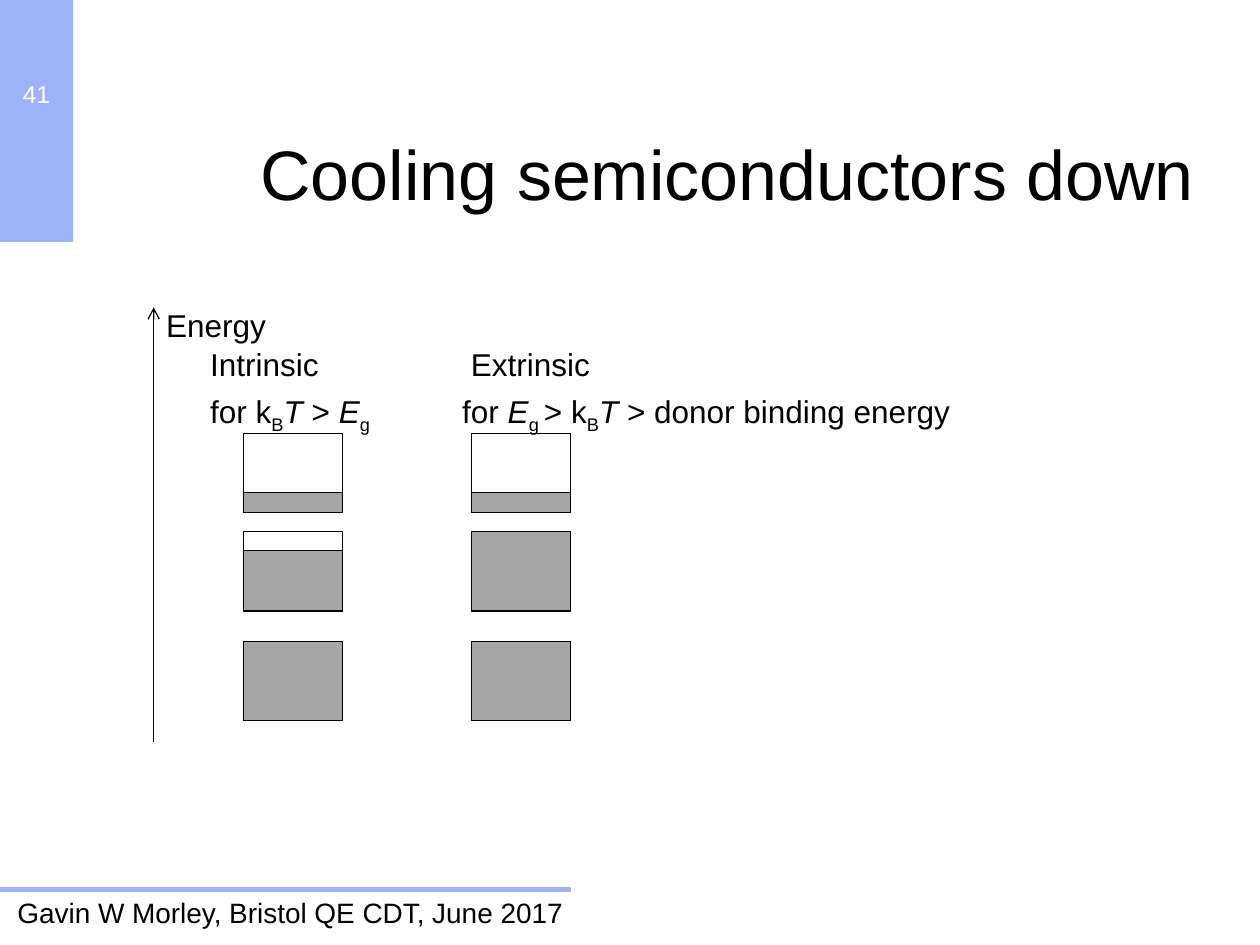
from lxml import etree
from pptx import Presentation
from pptx.dml.color import RGBColor
from pptx.enum import shapes, text
from pptx.oxml import ns
from pptx.util import Inches, Pt

BLUE = RGBColor(0x9D, 0xB2, 0xF8)
GREY = RGBColor(0xA6, 0xA6, 0xA6)
BLACK = RGBColor(0, 0, 0)
WHITE = RGBColor(255, 255, 255)
FONT = "Arial"

# Runs are (words, style): "" plain, "i" italic, "sub" subscript
TITLE = [[("Cooling semiconductors down", "")]]
FOOTER = [[("Gavin W Morley, Bristol QE CDT, June 2017", "")]]
NUMBER = [[("41", "")]]
AXIS = [[("Energy", "")]]
LABELS = [
    [("Intrinsic \t\t Extrinsic", "")],
    [("for k", ""), ("B", "sub"), ("T", "i"), (" > ", ""), ("E", "i"), ("g", "sub"),
     ("\tfor ", ""), ("E", "i"), ("g ", "sub"), ("> k", ""), ("B", "sub"), ("T", "i"),
     (" > donor binding energy\t", "")],
]
LABEL_TABS = range(1, 7)

# Bands are (top, height, fill), from back to front
BAND_W = 0.79
EMPTY = (3.44, 0.63, None)
CARRIERS = (3.91, 0.16, GREY)
CORE = (5.09, 0.63, GREY)
BANDS = {
    1.93: [(4.37, 0.48, GREY), EMPTY, CORE, (4.22, 0.63, None), CARRIERS],  # intrinsic
    3.74: [EMPTY, CORE, CARRIERS, (4.22, 0.63, GREY)],  # extrinsic
}


def add_box(slide, x, y, w, h, fill, edge=None):
    box = slide.shapes.add_shape(
        shapes.MSO_SHAPE.RECTANGLE, Inches(x), Inches(y), Inches(w), Inches(h))
    box.shadow.inherit = False
    if fill is None:
        box.fill.background()
    else:
        box.fill.solid()
        box.fill.fore_color.rgb = fill
    if edge is None:
        box.line.fill.background()
    else:
        box.line.color.rgb = edge
        box.line.width = Pt(0.75)


def set_tabs(para, stops):
    tabs = etree.SubElement(para._p.get_or_add_pPr(), ns.qn("a:tabLst"))
    for stop in stops:
        etree.SubElement(tabs, ns.qn("a:tab"), pos=str(Inches(stop)), algn="l")


def add_text(slide, x, y, w, h, paras, size, color=BLACK, align=None,
             before=0, pitch=None, wrap=True, tabs=()):
    frame = slide.shapes.add_textbox(
        Inches(x), Inches(y), Inches(w), Inches(h)).text_frame
    frame.word_wrap = wrap
    frame.vertical_anchor = text.MSO_ANCHOR.TOP
    for n, runs in enumerate(paras):
        para = frame.add_paragraph() if n else frame.paragraphs[0]
        para.alignment = align
        para.space_before = Pt(before)
        if pitch:
            para.line_spacing = Pt(pitch)
        if tabs:
            set_tabs(para, tabs)
        for words, style in runs:
            run = para.add_run()
            run.text = words
            run.font.name = FONT
            run.font.size = Pt(size)
            run.font.color.rgb = color
            if style == "i":
                run.font.italic = True
            elif style == "sub":
                run.font._element.set("baseline", "-25000")


def add_line(slide, x1, y1, x2, y2, color, width, arrow=False):
    line = slide.shapes.add_connector(
        shapes.MSO_CONNECTOR.STRAIGHT, Inches(x1), Inches(y1), Inches(x2), Inches(y2))
    line.line.color.rgb = color
    line.line.width = Pt(width)
    if arrow:
        etree.SubElement(line.line._get_or_add_ln(), ns.qn("a:tailEnd"), type="arrow")
    etree.SubElement(line._element.spPr, ns.qn("a:effectLst"))


def main():
    deck = Presentation()
    deck.slide_width, deck.slide_height = Inches(10), Inches(7.5)
    slide = deck.slides.add_slide(deck.slide_layouts[6])

    add_box(slide, 0, 0, 0.58, 1.92, BLUE)
    add_text(slide, 0.04, 7.06, 4.55, 0.37, FOOTER, 16, wrap=False)
    add_line(slide, -0.02, 7.06, 4.53, 7.06, BLUE, 3)
    add_text(slide, 0, 0.58, 0.58, 0.58, NUMBER, 14, WHITE, text.PP_ALIGN.CENTER)
    add_text(slide, 1.06, 0.99, 8.51, 0.77, TITLE, 40,
             align=text.PP_ALIGN.RIGHT, before=5)

    for x, bands in BANDS.items():
        for y, h, fill in bands:
            add_box(slide, x, y, BAND_W, h, fill, BLACK)

    add_line(slide, 1.22, 5.89, 1.22, 2.44, BLACK, 0.75, arrow=True)
    add_text(slide, 1.22, 2.18, 1, 0.54, AXIS, 18, before=5, pitch=36, wrap=False)
    add_text(slide, 1.57, 2.69, 6.58, 1.15, LABELS, 18, before=5, tabs=LABEL_TABS)

    deck.save("out.pptx")


if __name__ == "__main__":
    main()
